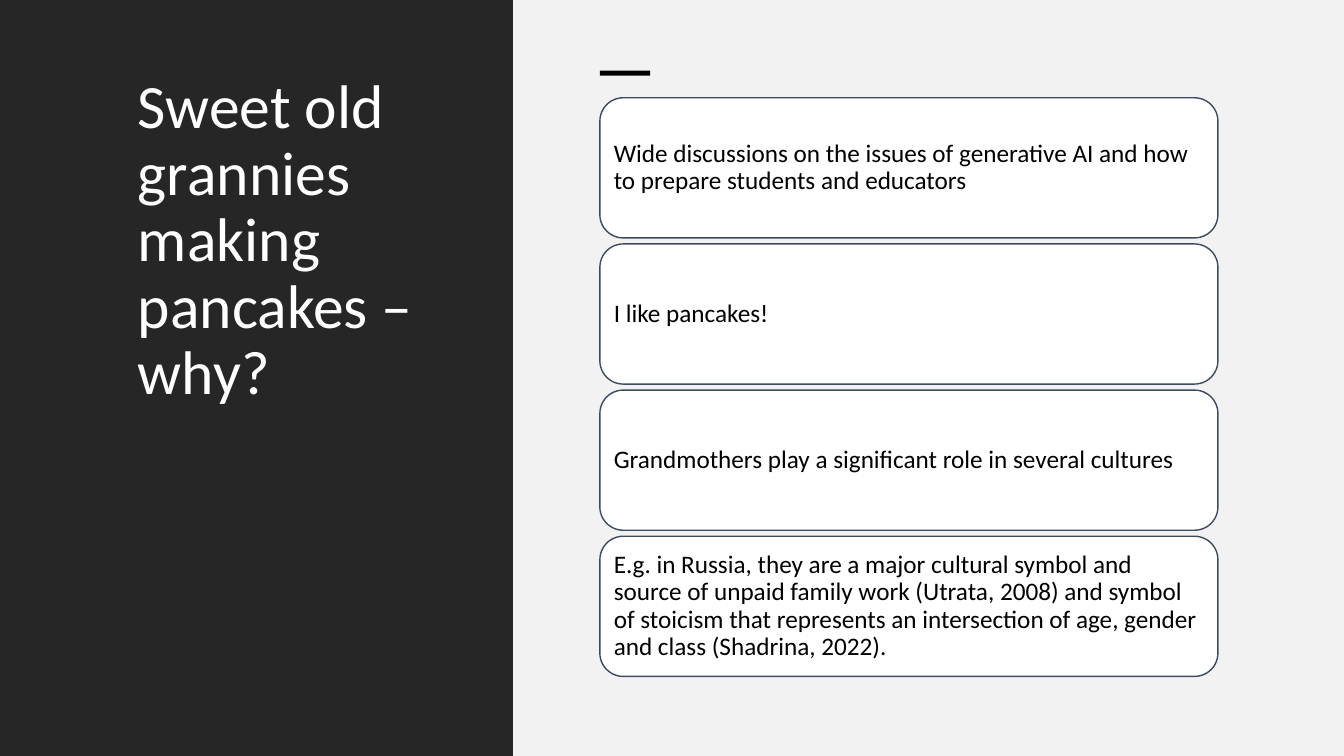
"""Build the slide explaining the choice of pancake-making grannies."""
from dataclasses import dataclass

import pptx
import pptx.dml.color
import pptx.enum.shapes
import pptx.enum.text
import pptx.presentation
import pptx.shapes.autoshape
import pptx.slide
import pptx.text.text
import pptx.util

Inches = pptx.util.Inches
RGBColor = pptx.dml.color.RGBColor
MSO_SHAPE = pptx.enum.shapes.MSO_SHAPE
MSO_ANCHOR = pptx.enum.text.MSO_ANCHOR
PP_ALIGN = pptx.enum.text.PP_ALIGN

CHARCOAL = RGBColor(0x26, 0x26, 0x26)
PALE_GREY = RGBColor(0xF2, 0xF2, 0xF2)
SLATE = RGBColor(0x3D, 0x4B, 0x5F)
WHITE = RGBColor(0xFF, 0xFF, 0xFF)
BLACK = RGBColor(0x00, 0x00, 0x00)

TITLE = "Sweet old grannies making pancakes – why?"
REASONS = [
    "Wide discussions on the issues of generative AI and how to prepare students and educators",
    "I like pancakes!",
    "Grandmothers play a significant role in several cultures",
    "E.g. in Russia, they are a major cultural symbol and source of unpaid family work "
    "(Utrata, 2008) and symbol of stoicism that represents an intersection of age, gender "
    "and class (Shadrina, 2022).",
]
CARD_LEFT, CARD_TOP, CARD_WIDTH, CARD_HEIGHT = 5.95, 0.97, 6.13, 1.39
CARD_PITCH = 1.45


@dataclass(frozen=True)
class Box:
    left: float
    top: float
    width: float
    height: float

    def emu(self) -> tuple[int, int, int, int]:
        return (Inches(self.left), Inches(self.top), Inches(self.width), Inches(self.height))


@dataclass(frozen=True)
class Panel:
    box: Box
    color: RGBColor


PANELS = [
    Panel(Box(0, 0, 5.09, 7.5), CHARCOAL),
    Panel(Box(5.09, 0, 8.25, 7.5), PALE_GREY),
    Panel(Box(CARD_LEFT, 0.7, 0.5, 0.05), BLACK),
]


def add_filled(s: pptx.slide.Slide, kind: MSO_SHAPE, box: Box,
               color: RGBColor) -> pptx.shapes.autoshape.Shape:
    sp = s.shapes.add_shape(kind, *box.emu())
    sp.shadow.inherit = False
    sp.fill.solid()
    sp.fill.fore_color.rgb = color
    sp.line.fill.background()
    return sp


def write_text(tf: pptx.text.text.TextFrame, text: str, size: int, color: RGBColor) -> None:
    tf.word_wrap = True
    p = tf.paragraphs[0]
    p.text = text
    p.alignment = PP_ALIGN.LEFT
    p.line_spacing = 0.9
    p.font.name = "Calibri"
    p.font.size = pptx.util.Pt(size)
    p.font.color.rgb = color


def add_card(s: pptx.slide.Slide, box: Box, text: str) -> None:
    sp = add_filled(s, MSO_SHAPE.ROUNDED_RECTANGLE, box, WHITE)
    sp.line.color.rgb = SLATE
    sp.line.width = pptx.util.Pt(1)
    tf = sp.text_frame
    tf.margin_left = tf.margin_right = tf.margin_top = tf.margin_bottom = Inches(0.07)
    tf.vertical_anchor = MSO_ANCHOR.MIDDLE
    write_text(tf, text, 18, BLACK)


def main() -> None:
    prs = pptx.Presentation()
    prs.slide_width, prs.slide_height = Inches(13.33), Inches(7.5)
    s = prs.slides.add_slide(prs.slide_layouts[6])
    for panel in PANELS:
        add_filled(s, MSO_SHAPE.RECTANGLE, panel.box, panel.color)
    title = s.shapes.add_textbox(*Box(1.27, 0.7, 3.17, 6.1).emu())
    write_text(title.text_frame, TITLE, 44, WHITE)
    for i, reason in enumerate(REASONS):
        box = Box(CARD_LEFT, CARD_TOP + i * CARD_PITCH, CARD_WIDTH, CARD_HEIGHT)
        add_card(s, box, reason)
    prs.save("out.pptx")


if __name__ == "__main__":
    main()
